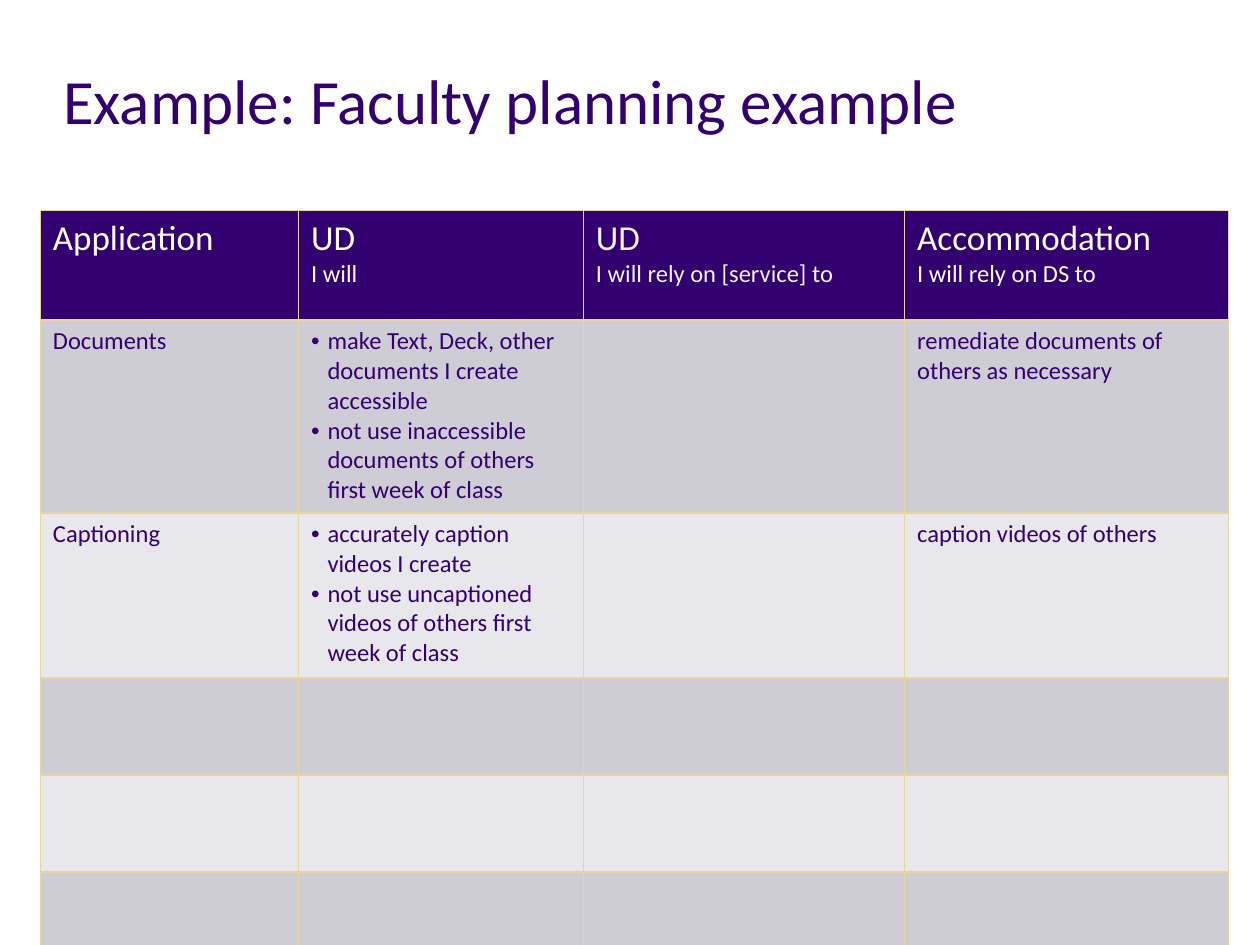
from lxml import etree
from pptx import Presentation
from pptx.dml.color import RGBColor
from pptx.enum import text
from pptx.oxml import ns
from pptx.util import Inches, Pt

PURPLE = RGBColor(0x33, 0x00, 0x6F)
GOLD = RGBColor(0xE8, 0xD3, 0xA2)
WHITE = RGBColor(0xFF, 0xFF, 0xFF)
OFF_WHITE = RGBColor(0xF2, 0xF2, 0xF2)
BANDS = [RGBColor(0xCE, 0xCC, 0xD5), RGBColor(0xE8, 0xE7, 0xEB)]

TITLE_SIZE, HEADING_SIZE, BODY_SIZE = 36, 20, 14
COLUMN_WIDTHS = [2.05, 2.26, 2.55, 2.57]
ROW_HEIGHTS = [0.87, 1.53, 1.31, 0.77, 0.77, 0.77]
HANGING = Inches(0.13)

HEADINGS = [
    (["Application"], WHITE),
    (["UD", "I will"], WHITE),
    (["UD", "I will rely on [service] to"], OFF_WHITE),
    (["Accommodation", "I will rely on DS to"], WHITE),
]
PLANS = [
    (["Documents"],
     ["make Text, Deck, other documents I create accessible",
      "not use inaccessible documents of others first week of class"],
     [],
     ["remediate documents of others as necessary"]),
    (["Captioning"],
     ["accurately caption videos I create",
      "not use uncaptioned videos of others first week of class"],
     [],
     ["caption videos of others"]),
]
BULLETED_COLUMN = 1


def style_font(font, size, color):
    for name, value in {"name": "Calibri", "size": Pt(size), "bold": False}.items():
        setattr(font, name, value)
    font.color.rgb = color


def add_bullet(paragraph):
    properties = paragraph._p.get_or_add_pPr()
    properties.set("marL", str(HANGING))
    properties.set("indent", str(-HANGING))
    etree.SubElement(properties, ns.qn("a:buFont")).set("typeface", "Arial")
    etree.SubElement(properties, ns.qn("a:buChar")).set("char", "•")


def add_borders(cell):
    """Draw all four edges; call before filling, as the schema puts lines first."""
    properties = cell._tc.get_or_add_tcPr()
    for edge in ("a:lnL", "a:lnR", "a:lnT", "a:lnB"):
        line = etree.SubElement(properties, ns.qn(edge), w=str(Pt(1)))
        fill = etree.SubElement(line, ns.qn("a:solidFill"))
        etree.SubElement(fill, ns.qn("a:srgbClr")).set("val", str(GOLD))


def paint_cell(cell, color):
    add_borders(cell)
    cell.fill.solid()
    cell.fill.fore_color.rgb = color


def write_cell(cell, lines, sizes, color, bulleted=False):
    frame = cell.text_frame
    for index, (line, size) in enumerate(zip(lines, sizes)):
        paragraph = frame.add_paragraph() if index else frame.paragraphs[0]
        if bulleted:
            add_bullet(paragraph)
        run = paragraph.add_run()
        run.text = line
        style_font(run.font, size, color)


def add_title(slide, wording):
    title = slide.shapes.title
    box = {"left": 0.4, "top": 0.44, "width": 9, "height": 1.08}
    for name, value in box.items():
        setattr(title, name, Inches(value))
    frame = title.text_frame
    frame.text = wording
    frame.vertical_anchor = text.MSO_ANCHOR.TOP
    heading = frame.paragraphs[0]
    heading.alignment = text.PP_ALIGN.LEFT
    style_font(heading.runs[0].font, TITLE_SIZE, PURPLE)


def add_planning_table(slide):
    table = slide.shapes.add_table(
        len(ROW_HEIGHTS), len(COLUMN_WIDTHS), Inches(0.32), Inches(1.67),
        Inches(sum(COLUMN_WIDTHS)), Inches(sum(ROW_HEIGHTS))).table
    for column, width in zip(table.columns, COLUMN_WIDTHS):
        column.width = Inches(width)
    for index, (row, height) in enumerate(zip(table.rows, ROW_HEIGHTS)):
        row.height = Inches(height)
        for cell in row.cells:
            paint_cell(cell, BANDS[(index - 1) % 2] if index else PURPLE)

    for column, (lines, color) in enumerate(HEADINGS):
        write_cell(table.cell(0, column), lines, [HEADING_SIZE, BODY_SIZE], color)
    for row, plan in enumerate(PLANS, start=1):
        for column, lines in enumerate(plan):
            write_cell(table.cell(row, column), lines, [BODY_SIZE] * len(lines),
                       PURPLE, bulleted=column == BULLETED_COLUMN)


def main():
    deck = Presentation()
    deck.slide_width, deck.slide_height = Inches(10), Inches(7.5)
    slide = deck.slides.add_slide(deck.slide_layouts[5])
    add_title(slide, "Example: Faculty planning example")
    add_planning_table(slide)
    deck.save("out.pptx")


if __name__ == "__main__":
    main()
